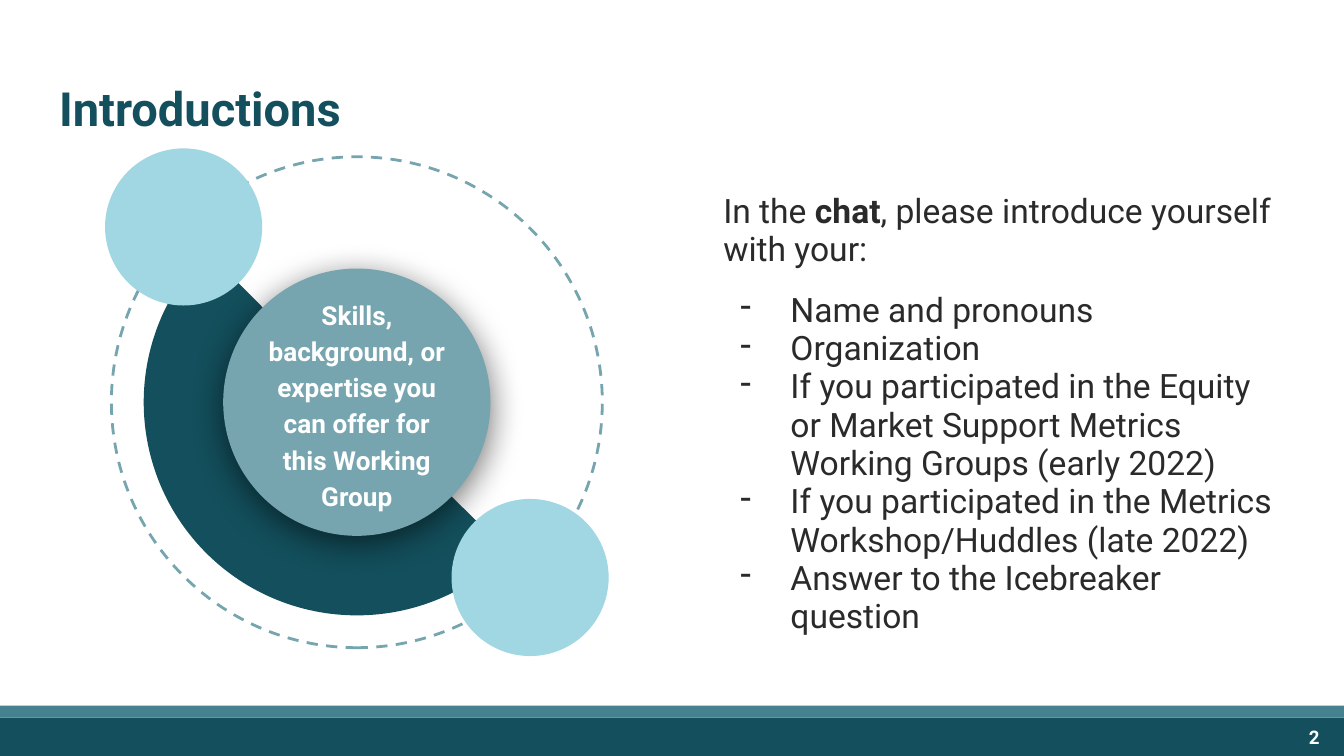
import pptx
import pptx.util
import pptx.dml.color
import pptx.enum.dml
import pptx.enum.shapes
import pptx.enum.text
import pptx.oxml
import pptx.oxml.ns

Pt = pptx.util.Pt
RGB = pptx.dml.color.RGBColor
KIND = pptx.enum.shapes.MSO_SHAPE
ALIGN = pptx.enum.text.PP_ALIGN
ANCHOR = pptx.enum.text.MSO_ANCHOR

DARK = RGB(0x13, 0x4F, 0x5C)
TEAL = RGB(0x45, 0x81, 0x8E)
SOFT = RGB(0x76, 0xA5, 0xAF)
LIGHT = RGB(0xA1, 0xD6, 0xE3)
INK = RGB(0x2A, 0x2A, 0x2A)
WHITE = RGB(0xFF, 0xFF, 0xFF)
PAD = Pt(7.2)

deck = pptx.Presentation()
deck.slide_width, deck.slide_height = Pt(720), Pt(405)
slide = deck.slides.add_slide(deck.slide_layouts[5])
shapes = slide.shapes


def draw(kind, left, top, width, height, fill=None):
    shape = shapes.add_shape(kind, Pt(left), Pt(top), Pt(width), Pt(height))
    shape.shadow.inherit = False
    if fill is None:
        shape.fill.background()
    else:
        shape.fill.solid()
        shape.fill.fore_color.rgb = fill
        shape.line.fill.background()
    return shape


def write(box, paras, size, color, bold=False, form=None, anchor=ANCHOR.MIDDLE):
    """Fill a box with paragraphs, each a list of (text, bold) runs."""
    frame = box.text_frame
    look = dict(word_wrap=True, vertical_anchor=anchor,
                auto_size=pptx.enum.text.MSO_AUTO_SIZE.NONE,
                margin_left=PAD, margin_right=PAD,
                margin_top=PAD, margin_bottom=PAD)
    for key, value in look.items():
        setattr(frame, key, value)
    for i, runs in enumerate(paras):
        para = frame.paragraphs[0] if i == 0 else frame.add_paragraph()
        for key, value in (form or {}).items():
            setattr(para, key, value)
        for text, strong in runs:
            run = para.add_run()
            run.text = text
            font = dict(name="Roboto", size=Pt(size), bold=bold or strong)
            for key, value in font.items():
                setattr(run.font, key, value)
            run.font.color.rgb = color
    return frame


# Footer bands
draw(KIND.RECTANGLE, -0.5, 384.5, 720.5, 20.5, DARK)
draw(KIND.RECTANGLE, -0.5, 378, 720.5, 6.5, TEAL)

# Title
title = shapes.title
place = dict(left=Pt(24.5), top=Pt(35.3), width=Pt(671), height=Pt(45.4))
for key, value in place.items():
    setattr(title, key, value)
write(title, [[("Introductions", True)]], 25.2, DARK,
      form=dict(alignment=ALIGN.LEFT), anchor=ANCHOR.TOP)

# Page number
page = shapes.add_textbox(Pt(671), Pt(384.5), Pt(43), Pt(20.5))
write(page, [[("2", True)]], 10, WHITE, form=dict(alignment=ALIGN.RIGHT))

# Instructions with a dash list
items = [
    "Name and pronouns",
    "Organization",
    "If you participated in the Equity or Market Support Metrics "
    "Working Groups (early 2022)",
    "If you participated in the Metrics Workshop/Huddles (late 2022)",
    "Answer to the Icebreaker question",
]
lead = [("In the ", False), ("chat", True),
        (", please introduce yourself with your:", False)]
body = shapes.add_textbox(Pt(380.4), Pt(90.7), Pt(314.6), Pt(262.8))
frame = write(body, [lead] + [[(item, False)] for item in items], 18, INK,
              form=dict(line_spacing=0.95))
frame.paragraphs[1].space_before = Pt(12)
for para in frame.paragraphs[1:]:
    props = para._p.get_or_add_pPr()
    props.set("marL", str(Pt(36)))
    props.set("indent", str(Pt(-27)))
    mark = pptx.oxml.ns.qn("a:buChar")
    props.append(props.makeelement(mark, {"char": "-"}))

# Concentric rings: dashed orbit, half pie, centre disc
midx, midy = 191.2, 215.5
rings = []
for kind, size, fill in [(KIND.OVAL, 263, None), (KIND.PIE, 228.4, DARK),
                         (KIND.OVAL, 143.2, SOFT)]:
    rings.append(draw(kind, midx - size / 2, midy - size / 2, size, size, fill))
orbit, pie, disc = rings

orbit.rotation = 270
orbit.line.color.rgb = SOFT
orbit.line.width = Pt(1.5)
orbit.line.dash_style = pptx.enum.dml.MSO_LINE.DASH
pie.adjustments[0], pie.adjustments[1] = 26.9, 135.11

# Soft shadow under the disc
glow = disc._element.spPr.find(pptx.oxml.ns.qn("a:effectLst"))
glow.append(pptx.oxml.parse_xml(
    f'<a:outerShdw {pptx.oxml.ns.nsdecls("a")} blurRad="{Pt(18)}" '
    f'dist="{Pt(4)}" dir="5400000" algn="bl" rotWithShape="0">'
    '<a:srgbClr val="000000"><a:alpha val="55000"/></a:srgbClr>'
    '</a:outerShdw>'))

# Centre label
label = shapes.add_textbox(Pt(133.2), Pt(177.8), Pt(116), Pt(76.4))
skill = "Skills, background, or expertise you can offer for this Working Group"
write(label, [[(skill, True)]], 14, WHITE,
      form=dict(alignment=ALIGN.CENTER, line_spacing=1.15))

# Small circles at both ends of the pie
for side in (-1, 1):
    draw(KIND.OVAL, midx + side * 92.8 - 42.1, midy + side * 93.9 - 42.1,
         84.2, 84.2, LIGHT)

deck.save("out.pptx")
